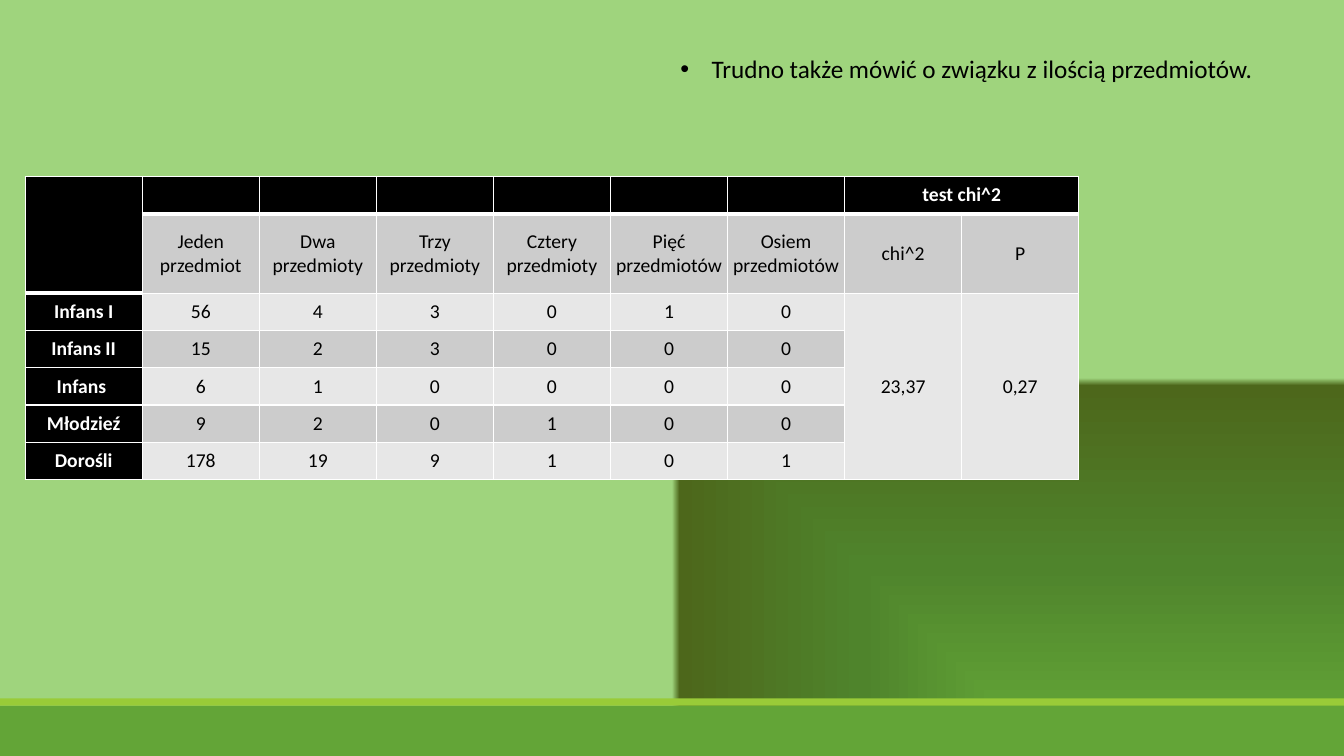
from dataclasses import dataclass

from pptx import Presentation, oxml
from pptx.dml import color
from pptx.enum import shapes, text
from pptx.oxml import ns
from pptx.util import Inches, Pt


@dataclass(frozen=True)
class Theme:
    font: str = "Calibri"
    body_size: int = 18
    table_size: int = 14
    dark: str = "000000"
    light: str = "FFFFFF"
    bands: tuple = ("E7E7E7", "CCCCCC")
    footer: str = "63A537"
    footer_edge: str = "99CB38"
    gradient: tuple = ((0, "67AC39"), (50, "4F842C"), (98, "4D671B"), (100, "9FD47D"))


THEME = Theme()
WIDTH, HEIGHT = 13.33, 7.5
THIN, THICK = 1, 3

HEADINGS = ["Jeden przedmiot", "Dwa przedmioty", "Trzy przedmioty", "Cztery przedmioty",
            "Pięć przedmiotów", "Osiem przedmiotów", "chi^2", "P"]
COUNTS = {
    "Infans I": [56, 4, 3, 0, 1, 0],
    "Infans II": [15, 2, 3, 0, 0, 0],
    "Infans ": [6, 1, 0, 0, 0, 0],
    "Młodzieź": [9, 2, 0, 1, 0, 0],
    "Dorośli": [178, 19, 9, 1, 0, 1],
}
TEST_RESULT = ["23,37", "0,27"]


def rgb(value):
    return color.RGBColor.from_string(value)


def add_run(paragraph, words, size, ink, bold=False):
    run = paragraph.add_run()
    run.text = words
    run.font.name = THEME.font
    run.font.size = Pt(size)
    run.font.bold = bold
    run.font.color.rgb = rgb(ink)


def add_background(slide):
    stops = "".join(f'<a:gs pos="{share * 1000}"><a:srgbClr val="{tone}"/></a:gs>'
                    for share, tone in THEME.gradient)
    background = oxml.parse_xml(
        f'<p:bg {ns.nsdecls("p", "a")}><p:bgPr><a:gradFill rotWithShape="1">'
        f'<a:gsLst>{stops}</a:gsLst><a:path path="rect">'
        '<a:fillToRect l="100000" t="100000"/></a:path></a:gradFill>'
        '<a:effectLst/></p:bgPr></p:bg>')
    slide.element.cSld.insert(0, background)


def add_footer(slide, top, height, edge):
    # Green band with a thin brighter strip above it
    for y, depth, tone in ((top, height, THEME.footer), (top - edge, edge, THEME.footer_edge)):
        band = slide.shapes.add_shape(shapes.MSO_SHAPE.RECTANGLE, 0, Inches(y),
                                      Inches(WIDTH), Inches(depth))
        band.shadow.inherit = False
        band.fill.solid()
        band.fill.fore_color.rgb = rgb(tone)
        band.line.fill.background()


def set_borders(cell, top, bottom):
    properties = cell._tc.get_or_add_tcPr()
    for side, points in (("L", THIN), ("R", THIN), ("T", top), ("B", bottom)):
        properties.append(oxml.parse_xml(
            f'<a:ln{side} {ns.nsdecls("a")} w="{Pt(points)}"><a:solidFill>'
            f'<a:srgbClr val="{THEME.light}"/></a:solidFill></a:ln{side}>'))


def style_cell(cell, words, row, column):
    header = row == 0 or column == 0
    thick_below = row == 0 or (row, column) == (1, 0)
    thick_above = (row == 1 and column > 0) or (row, column) == (2, 0)
    set_borders(cell, THICK if thick_above else THIN, THICK if thick_below else THIN)
    cell.fill.solid()
    cell.fill.fore_color.rgb = rgb(THEME.dark if header else THEME.bands[row % 2])
    cell.margin_left = cell.margin_right = cell.margin_top = cell.margin_bottom = 0
    cell.vertical_anchor = text.MSO_ANCHOR.MIDDLE
    if words:
        paragraph = cell.text_frame.paragraphs[0]
        paragraph.alignment = text.PP_ALIGN.CENTER
        add_run(paragraph, words, THEME.table_size,
                THEME.light if header else THEME.dark, header)


def add_counts_table(slide, left, top, width, row_height, heading_height):
    rows = [[""] * 7 + ["test chi^2", ""], [""] + HEADINGS]
    for index, (group, counts) in enumerate(COUNTS.items()):
        rows.append([group, *map(str, counts), *(TEST_RESULT if index == 0 else ["", ""])])
    row_count, column_count = len(rows), len(rows[0])
    height = row_height * (row_count - 1) + heading_height
    table = slide.shapes.add_table(row_count, column_count, Inches(left), Inches(top),
                                   Inches(width), Inches(height)).table
    table.first_row = table.horz_banding = False
    for column in table.columns:
        column.width = Inches(width / column_count)
    for index, row in enumerate(table.rows):
        row.height = Inches(heading_height if index == 1 else row_height)

    # Corner, test heading and the two test results
    last = row_count - 1
    for start, end in (((0, 0), (1, 0)), ((0, 7), (0, 8)),
                       ((2, 7), (last, 7)), ((2, 8), (last, 8))):
        table.cell(*start).merge(table.cell(*end))

    for row, values in enumerate(rows):
        for column, words in enumerate(values):
            style_cell(table.cell(row, column), words, row, column)


def add_remark(slide, left, top, width, height, indent):
    box = slide.shapes.add_textbox(Inches(left), Inches(top), Inches(width), Inches(height))
    frame = box.text_frame
    frame.word_wrap = True
    frame.auto_size = text.MSO_AUTO_SIZE.SHAPE_TO_FIT_TEXT
    paragraph = frame.paragraphs[0]
    properties = paragraph._p.get_or_add_pPr()
    properties.set("marL", str(Inches(indent)))
    properties.set("indent", str(-Inches(indent)))
    for tag in ('buFont {} typeface="Arial"', 'buChar {} char="•"'):
        properties.append(oxml.parse_xml(f'<a:{tag.format(ns.nsdecls("a"))}/>'))
    add_run(paragraph, "Trudno także mówić o związku z ilością przedmiotów.",
            THEME.body_size, THEME.dark)


def main():
    presentation = Presentation()
    presentation.slide_width = Inches(WIDTH)
    presentation.slide_height = Inches(HEIGHT)
    slide = presentation.slides.add_slide(presentation.slide_layouts[6])
    add_background(slide)
    add_footer(slide, top=HEIGHT - 0.5, height=0.5, edge=0.07)
    add_counts_table(slide, left=0.25, top=1.75, width=10.45,
                     row_height=0.37, heading_height=0.79)
    add_remark(slide, left=6.65, top=0.48, width=6.5, height=0.4, indent=0.31)
    presentation.save("out.pptx")


if __name__ == "__main__":
    main()
